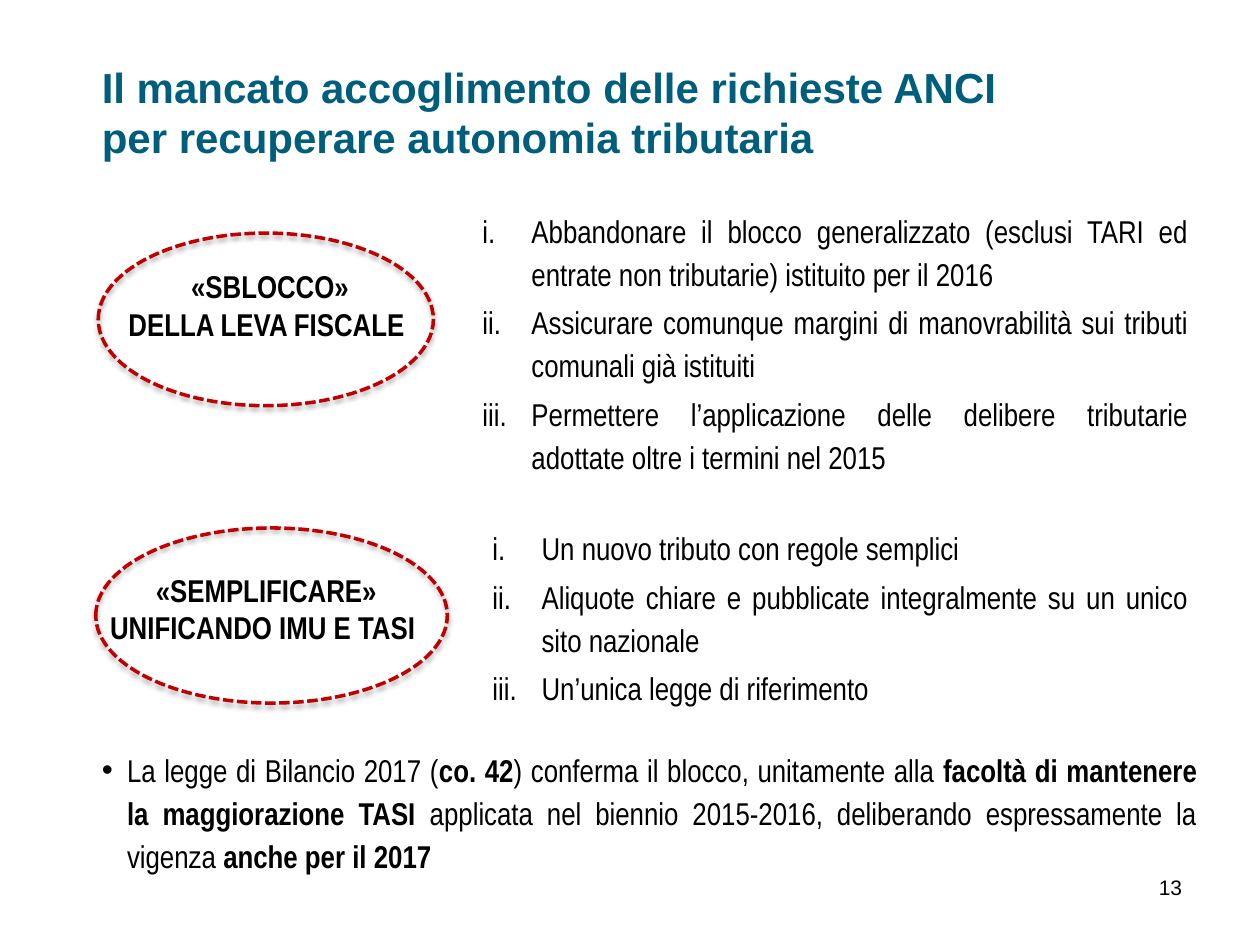
from lxml import etree
from pptx import Presentation, util as u
from pptx.dml.color import RGBColor
from pptx.enum import dml, shapes, text
from pptx.oxml.ns import qn

NARROW = "Arial Narrow"
ALIGN = text.PP_ALIGN


def color(code):
    return RGBColor.from_string(code)


def node(parent, tag, **attrs):
    item = etree.SubElement(parent, qn(tag))
    for key, value in attrs.items():
        item.set(key, str(value))
    return item


def mark(para, bullet, indent):
    """Give a paragraph a hanging bullet, or roman numbers for "i."."""
    props = para._p.get_or_add_pPr()
    props.set("marL", str(u.Inches(indent)))
    props.set("indent", str(-u.Inches(indent)))
    node(props, "a:buFont", typeface="Arial")
    if bullet == "i.":
        node(props, "a:buAutoNum", type="romanLcPeriod")
    else:
        node(props, "a:buChar", char=bullet)


def write(slide, box, paras, size=18, font=NARROW, ink="000000", bold=False,
          align=ALIGN.LEFT, anchor=text.MSO_ANCHOR.TOP, wrap=True,
          bullet=None, indent=0, lead=None, gap=0):
    """Add a text box; a paragraph is a string or a list of (words, bold)."""
    frame = slide.shapes.add_textbox(*map(u.Inches, box)).text_frame
    frame.word_wrap = wrap
    frame.vertical_anchor = anchor
    for i, runs in enumerate(paras):
        para = frame.paragraphs[0] if i == 0 else frame.add_paragraph()
        if bullet:
            mark(para, bullet, indent)
        para.alignment = align
        if lead:
            para.line_spacing = lead
        if i and gap:
            para.space_before = u.Pt(gap)
        for words, heavy in [(runs, bold)] if isinstance(runs, str) else runs:
            run = para.add_run()
            run.text = words
            run.font.size = u.Pt(size)
            run.font.name = font
            run.font.bold = heavy
            run.font.color.rgb = color(ink)


def ring(slide, box):
    """Dashed red ellipse with a soft shadow below it."""
    oval = slide.shapes.add_shape(shapes.MSO_SHAPE.OVAL, *map(u.Inches, box))
    oval.fill.background()
    oval.line.color.rgb = color("C00000")
    oval.line.width = u.Pt(2)
    oval.line.dash_style = dml.MSO_LINE.SQUARE_DOT
    oval.shadow.inherit = False
    effects = oval._element.spPr.find(qn("a:effectLst"))
    shade = node(effects, "a:outerShdw", blurRad=u.Pt(3.1), dist=u.Pt(1.8),
                 dir=90 * 60000, rotWithShape=0)
    node(node(shade, "a:srgbClr", val="000000"), "a:alpha", val=35000)


def topic(slide, oval, label, lines, box, points):
    """A ringed label on the left and its numbered points on the right."""
    write(slide, box, points, align=ALIGN.JUSTIFY, bullet="i.", indent=0.39,
          lead=1.14, gap=3)
    write(slide, label, lines, bold=True, align=ALIGN.CENTER, wrap=False)
    ring(slide, oval)


def main():
    deck = Presentation()
    deck.slide_width, deck.slide_height = u.Inches(10), u.Inches(7.5)
    slide = deck.slides.add_slide(deck.slide_layouts[6])

    write(slide, (0.71, 0.44, 7.84, 0.89),
          ["Il mancato accoglimento delle richieste ANCI "
           "per recuperare autonomia tributaria"],
          size=24, font="Arial", ink="005E7D", bold=True,
          anchor=text.MSO_ANCHOR.MIDDLE)
    topic(slide, (0.78, 1.85, 2.66, 1.37), (0.91, 2.07, 2.41, 0.71),
          [" «SBLOCCO»", "DELLA LEVA FISCALE"],
          (3.73, 1.59, 5.8, 2.34),
          ["Abbandonare il blocco generalizzato (esclusi TARI ed entrate "
           "non tributarie) istituito per il 2016",
           "Assicurare comunque margini di manovrabilità sui tributi "
           "comunali già istituiti",
           "Permettere l’applicazione delle delibere tributarie adottate "
           "oltre i termini nel 2015"])
    topic(slide, (0.76, 4.19, 2.79, 1.39), (0.76, 4.48, 2.65, 0.71),
          [" «SEMPLIFICARE»", "UNIFICANDO IMU E TASI"],
          (3.81, 4.11, 5.72, 1.57),
          ["Un nuovo tributo con regole semplici",
           "Aliquote chiare e pubblicate integralmente su un unico sito "
           "nazionale",
           "Un’unica legge di riferimento"])
    write(slide, (0.71, 5.87, 8.89, 1.14),
          [[("La legge di Bilancio 2017 (", False), ("co. 42", True),
            (") conferma il blocco, unitamente alla ", False),
            ("facoltà di mantenere la maggiorazione TASI", True),
            (" applicata nel biennio 2015-2016, deliberando espressamente "
             "la vigenza ", False), ("anche per il 2017", True)]],
          align=ALIGN.JUSTIFY, bullet="•", indent=0.2, lead=1.14)
    write(slide, (8.89, 6.89, 0.8, 0.5), ["13"], size=12, font="Arial",
          align=ALIGN.CENTER)
    deck.save("out.pptx")


if __name__ == "__main__":
    main()
